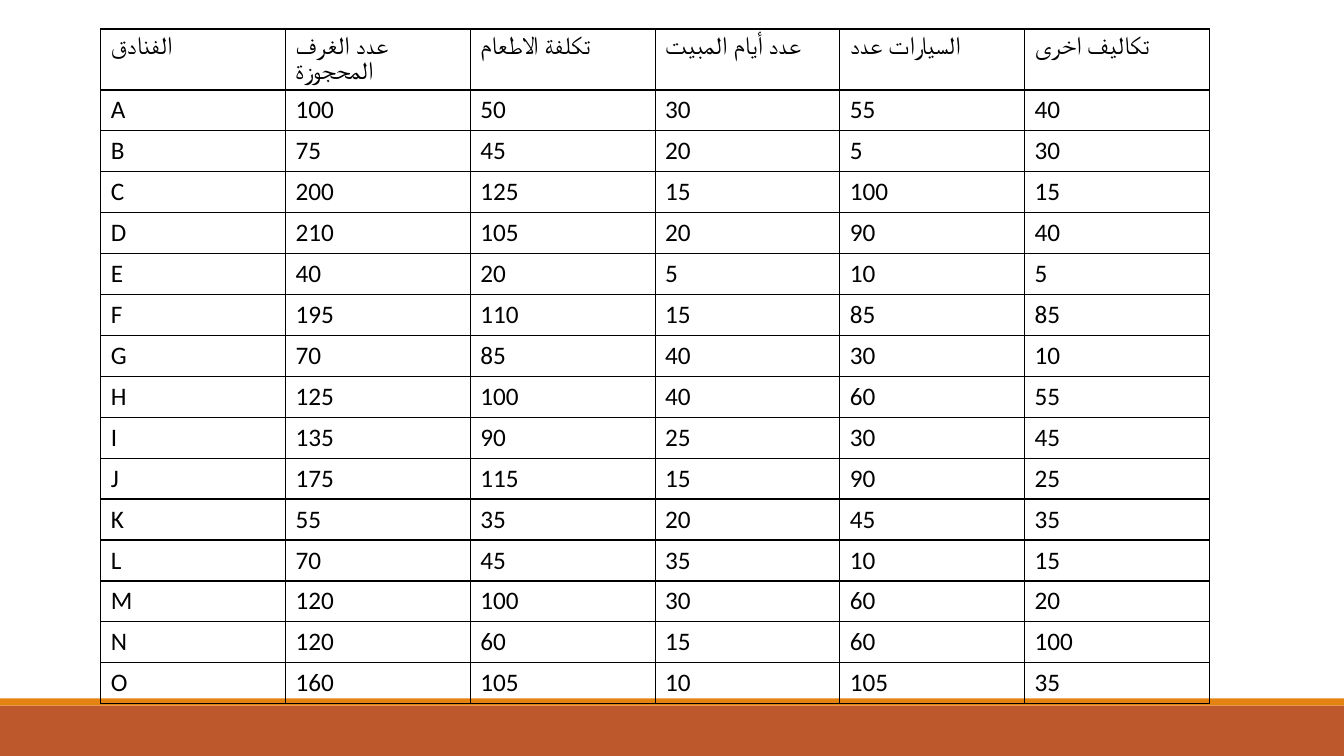
from dataclasses import dataclass

from lxml.etree import SubElement
from pptx import Presentation
from pptx.dml.color import RGBColor
from pptx.enum.shapes import MSO_SHAPE
from pptx.oxml.ns import qn
from pptx.util import Pt


@dataclass(frozen=True)
class Theme:
    font: str = "Calibri"
    text_size: int = 18
    ink: str = "000000"
    base_band: str = "BD582C"
    accent_band: str = "E48312"


theme = Theme()

HEADINGS = ("الفنادق", "عدد الغرف المحجوزة", "تكلفة الاطعام",
            "عدد أيام المبيت", "السيارات عدد", "تكاليف اخرى")
HOTELS = (
    ("A", 100, 50, 30, 55, 40),
    ("B", 75, 45, 20, 5, 30),
    ("C", 200, 125, 15, 100, 15),
    ("D", 210, 105, 20, 90, 40),
    ("E", 40, 20, 5, 10, 5),
    ("F", 195, 110, 15, 85, 85),
    ("G", 70, 85, 40, 30, 10),
    ("H", 125, 100, 40, 60, 55),
    ("I", 135, 90, 25, 30, 45),
    ("J", 175, 115, 15, 90, 25),
    ("K", 55, 35, 20, 45, 35),
    ("L", 70, 45, 35, 10, 15),
    ("M", 120, 100, 30, 60, 20),
    ("N", 120, 60, 15, 60, 100),
    ("O", 160, 105, 10, 105, 35),
)
SLIDE_WIDTH, SLIDE_HEIGHT = 960, 540
HEADING_HEIGHT, HOTEL_HEIGHT = 43.5, 29.25


def write(cell, text, font=theme.font, size=theme.text_size, color=theme.ink):
    run = cell.text_frame.paragraphs[0].add_run()
    run.text = text
    run.font.name = font
    run.font.size = Pt(size)
    run.font.color.rgb = RGBColor.from_string(color)


def outline(cell, color=theme.ink, width=1):
    """Draw a solid border on all four sides of the cell."""
    properties = cell._tc.get_or_add_tcPr()
    for side in ("a:lnL", "a:lnR", "a:lnT", "a:lnB"):
        border = SubElement(properties, qn(side), w=str(Pt(width)))
        solid = SubElement(border, qn("a:solidFill"))
        SubElement(solid, qn("a:srgbClr"), val=color)


deck = Presentation()
deck.slide_width, deck.slide_height = Pt(SLIDE_WIDTH), Pt(SLIDE_HEIGHT)
slide = deck.slides.add_slide(deck.slide_layouts[6])

# Footer bands
for top, height, color in ((504, 36, theme.base_band), (498.75, 5.25, theme.accent_band)):
    band = slide.shapes.add_shape(MSO_SHAPE.RECTANGLE, 0, Pt(top), Pt(SLIDE_WIDTH), Pt(height))
    band.shadow.inherit = False
    band.fill.solid()
    band.fill.fore_color.rgb = RGBColor.from_string(color)
    band.line.fill.background()

# Hotel figures
records = (HEADINGS, *HOTELS)
heights = [HEADING_HEIGHT] + [HOTEL_HEIGHT] * len(HOTELS)
hotel_table = slide.shapes.add_table(
    len(records), len(HEADINGS), Pt(72), Pt(20.75), Pt(792), Pt(sum(heights))).table
hotel_table.first_row = False
hotel_table.horz_banding = False

for row, height, record in zip(hotel_table.rows, heights, records):
    row.height = Pt(height)
    for cell, value in zip(row.cells, record):
        outline(cell)
        cell.fill.background()
        write(cell, str(value))

deck.save("out.pptx")
